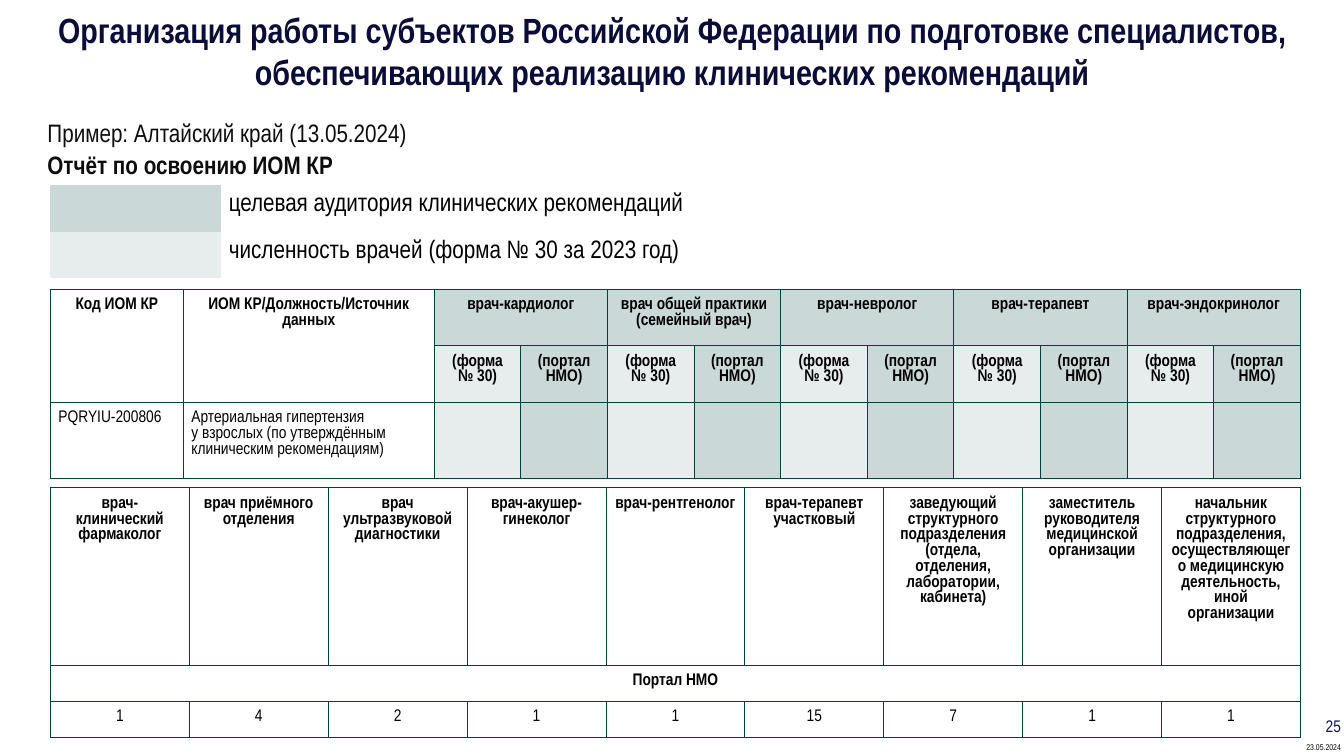
from lxml import etree
from pptx import Presentation
from pptx import util as u
from pptx.dml import color
from pptx.enum import text
from pptx.oxml import ns

WIDE, HIGH = 13.33, 7.5
LEFT, SPAN = 0.5, 12.4  # shared edge and width of the tables
PAD = 0.08
DARK, PALE, EDGE = "CBD8D8", "E7EDED", "004040"
MID = text.PP_ALIGN.CENTER
RIGHT = text.PP_ALIGN.RIGHT
TIED = {"№", "у", "по", "(по", "за", "2023"}  # words kept with the next one

JOBS = ["врач-кардиолог", "врач общей практики (семейный врач)",
        "врач-невролог", "врач-терапевт", "врач-эндокринолог"]
STAFF = [
    ("врач-клинический фармаколог", 1),
    ("врач приёмного отделения", 4),
    ("врач ультразвуковой диагностики", 2),
    ("врач-акушер-гинеколог", 1),
    ("врач-рентгенолог", 1),
    ("врач-терапевт участковый", 15),
    ("заведующий структурного подразделения "
     "(отдела, отделения, лаборатории, кабинета)", 7),
    ("заместитель руководителя медицинской организации", 1),
    ("начальник структурного подразделения, осуществляющего "
     "медицинскую деятельность, иной организации", 1),
]


def paint(target, tint):
    target.rgb = color.RGBColor.from_string(tint)


def tie(words):
    """Put a no-break space after each short word."""
    parts = [word + (chr(160) if word in TIED else " ")
             for word in words.split()]
    return "".join(parts).strip()


def style(para, words, size, tint="000000", bold=False, align=None):
    run = para.add_run()
    run.text = tie(words)
    font = {"name": "Arial Narrow", "size": u.Pt(size), "bold": bold}
    for key, value in font.items():
        setattr(run.font, key, value)
    paint(run.font.color, tint)
    para.alignment = align


def label(slide, at, words, size, pad=PAD, wrap=True, foot=None,
          anchor=text.MSO_ANCHOR.MIDDLE, **look):
    frame = slide.shapes.add_textbox(*map(u.Inches, at)).text_frame
    form = {"word_wrap": wrap, "vertical_anchor": anchor}
    for side in ("left", "right", "top", "bottom"):
        form["margin_" + side] = u.Inches(pad)
    if foot is not None:
        form["margin_bottom"] = u.Inches(foot)
    for key, value in form.items():
        setattr(frame, key, value)
    style(frame.paragraphs[0], words, size, **look)


def border(cell, tint):
    props = cell._tc.get_or_add_tcPr()
    for side in "LRTB":
        line = etree.SubElement(props, ns.qn("a:ln" + side), w=str(u.Pt(0.75)))
        if tint:
            fill = etree.SubElement(line, ns.qn("a:solidFill"))
            etree.SubElement(fill, ns.qn("a:srgbClr"), val=tint)
        else:
            etree.SubElement(line, ns.qn("a:noFill"))


def grid(slide, top, width, shares, rows, edge=None):
    """Add a plain table whose columns split the width by shares."""
    size = (LEFT, top, width, sum(rows))
    table = slide.shapes.add_table(
        len(rows), len(shares), *map(u.Inches, size)).table
    table.first_row = table.horz_banding = False
    for col, share in zip(table.columns, shares):
        col.width = u.Inches(width * share / sum(shares))
    for row, height in zip(table.rows, rows):
        row.height = u.Inches(height)
    for cell in table.iter_cells():
        border(cell, edge)
        cell.fill.background()
        for side in ("left", "right", "top", "bottom"):
            setattr(cell, "margin_" + side, u.Inches(PAD))
        # Small end mark, so that empty cells do not stretch their row
        para = cell.text_frame.paragraphs[0]
        etree.SubElement(para._p, ns.qn("a:endParaRPr"), sz="1200")
    return table


def put(cell, words="", tint=None, size=12, **look):
    if tint:
        cell.fill.solid()
        paint(cell.fill.fore_color, tint)
    if words:
        style(cell.text_frame.paragraphs[0], words, size, **look)


def legend(slide):
    table = grid(slide, 1.84, 6.97, [1.69, 5.28], [0.46] * 2)
    items = [(DARK, "целевая аудитория клинических рекомендаций"),
             (PALE, "численность врачей (форма № 30 за 2023 год)")]
    for row, (tint, words) in enumerate(items):
        put(table.cell(row, 0), tint=tint)
        put(table.cell(row, 1), words, size=18)


def report(slide):
    pairs = 2 * len(JOBS)
    table = grid(slide, 2.87, SPAN, [1.32, 2.49] + [0.86] * pairs,
                 [0.47, 0.47, 0.64], EDGE)
    head = {"bold": True, "align": MID}
    for col, words in enumerate(["Код ИОМ КР",
                                 "ИОМ КР/Должность/Источник данных"]):
        table.cell(0, col).merge(table.cell(1, col))
        put(table.cell(0, col), words, **head)
    put(table.cell(2, 0), "PQRYIU‑200806")
    put(table.cell(2, 1), "Артериальная гипертензия у взрослых "
        "(по утверждённым клиническим рекомендациям)")
    for spot, job in enumerate(JOBS):
        col = 2 + 2 * spot
        table.cell(0, col).merge(table.cell(0, col + 1))
        put(table.cell(0, col), job, DARK, **head)
        halves = [("(форма № 30)", PALE), ("(портал НМО)", DARK)]
        for step, (words, tint) in enumerate(halves):
            put(table.cell(1, col + step), words, tint, **head)
            put(table.cell(2, col + step), tint=tint)


def portal(slide):
    count = len(STAFF)
    table = grid(slide, 4.84, SPAN, [1] * count, [1.75, 0.36, 0.36], EDGE)
    table.cell(1, 0).merge(table.cell(1, count - 1))
    put(table.cell(1, 0), "Портал НМО", bold=True, align=MID)
    for col, (job, total) in enumerate(STAFF):
        put(table.cell(0, col), job, bold=True, align=MID)
        put(table.cell(2, col), str(total), align=MID)


def main():
    deck = Presentation()
    deck.slide_width, deck.slide_height = u.Inches(WIDE), u.Inches(HIGH)
    slide = deck.slides.add_slide(deck.slide_layouts[6])

    # Title and lead lines
    label(slide, (0.17, 0, WIDE - 0.34, 1),
          "Организация работы субъектов Российской Федерации "
          "по подготовке специалистов, обеспечивающих реализацию "
          "клинических рекомендаций",
          25, tint="0C0C38", bold=True, align=MID)
    leads = ["Пример: Алтайский край (13.05.2024)",
             "Отчёт по освоению ИОМ КР"]
    for row, words in enumerate(leads):
        label(slide, (0.39, 1.08 + 0.32 * row, 6.28, 0.46), words, 18,
              tint="0D0D0D", bold=row == 1)

    # Tables
    legend(slide)
    report(slide)
    portal(slide)

    # Page number and date
    edge = WIDE - 0.42
    label(slide, (edge, 7.06, 0.43, 0.24), "25", 12, pad=0.04, foot=0,
          tint="131354", align=RIGHT)
    label(slide, (edge, 7.32, 0.43, 0.18), "23.05.2024", 6, pad=0.04,
          wrap=False, anchor=text.MSO_ANCHOR.TOP, align=RIGHT)
    deck.save("out.pptx")


if __name__ == "__main__":
    main()
